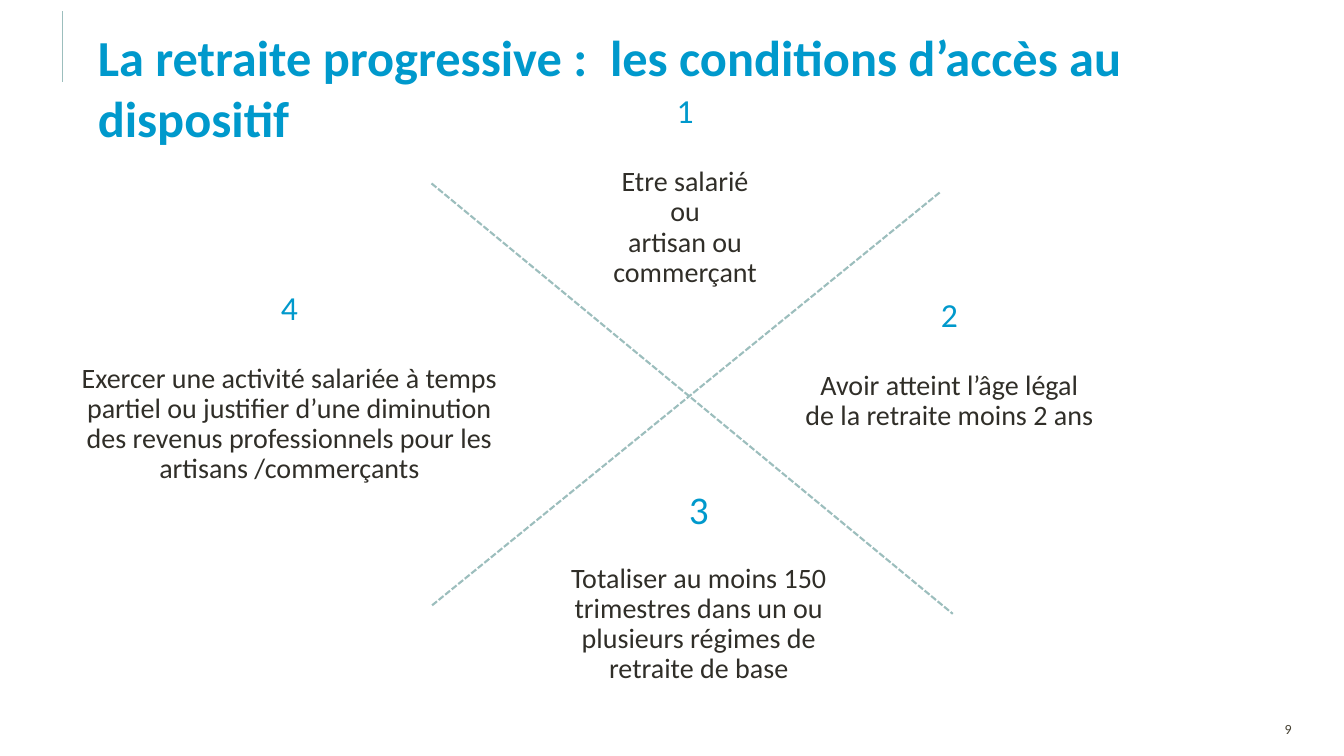
import pptx
import pptx.dml.color
import pptx.enum.dml
import pptx.enum.text
import pptx.oxml.ns
import pptx.util
from lxml import etree

Inches, Pt = pptx.util.Inches, pptx.util.Pt
ALIGN = pptx.enum.text.PP_ALIGN
ANCHOR = pptx.enum.text.MSO_ANCHOR
BLUE, DARK, GREY, SAGE = "0099CC", "302E28", "474233", "9CBEBD"

TITLE = "La retraite progressive :  les conditions d’accès au dispositif"
PAGE = "9"
# number, number size, gap below it (points), box (inches), paragraphs
TERMS = [
    ("1", 24, 26, (5.47, 0.89, 2.65, 2.05),
     ["Etre salarié", "ou", "artisan ou commerçant"]),
    ("2", 24, 26, (7.87, 2.91, 3.09, 1.44),
     ["Avoir atteint l’âge légal de la retraite moins 2 ans"]),
    ("3", 28, 22, (5.34, 4.82, 3.18, 2.07),
     ["Totaliser au moins 150 trimestres dans un ou plusieurs régimes de "
      "retraite de base"]),
    ("4", 24, 26, (0.62, 2.84, 4.5, 2.05),
     ["Exercer une activité salariée à temps partiel ou justifier d’une "
      "diminution des revenus professionnels pour les artisans /commerçants"]),
]
# start, end, width (points), dashed
LINES = [
    ((4.28, 1.82), (9.45, 6.09), 1.5, True),
    ((9.32, 1.91), (4.28, 6.01), 1.5, True),
    ((0.62, 0.11), (0.62, 0.81), 0.75, False),
]


def color(code):
    return pptx.dml.color.RGBColor.from_string(code)


def place(shape, box):
    shape.left, shape.top, shape.width, shape.height = map(Inches, box)


def frame(shape, anchor=ANCHOR.TOP):
    """Set wrapping, fixed size and anchor, and return the text frame."""
    body = shape.text_frame
    body.word_wrap = True
    body.auto_size = pptx.enum.text.MSO_AUTO_SIZE.NONE
    body.vertical_anchor = anchor
    return body


def write(para, text, size, code, bold=False, align=ALIGN.CENTER,
          space=0.9, before=0):
    para.alignment = align
    para.line_spacing = space
    para.space_before = Pt(before)
    run = para.add_run()
    run.text = text
    run.font.name = "Calibri"
    run.font.size = Pt(size)
    run.font.bold = bold
    run.font.color.rgb = color(code)


def draw(slide, start, end, width, dashed):
    line = slide.shapes.add_connector(
        pptx.enum.shapes.MSO_CONNECTOR.STRAIGHT,
        *map(Inches, start + end))
    line.line.color.rgb = color(SAGE)
    line.line.width = Pt(width)
    if dashed:
        # SQUARE_DOT is the sysDash preset's sibling; set the preset itself
        line.line.dash_style = pptx.enum.dml.MSO_LINE.SQUARE_DOT
        dash = line.line._ln.find(pptx.oxml.ns.qn("a:prstDash"))
        dash.set("val", "sysDash")
    etree.SubElement(line._element.spPr, pptx.oxml.ns.qn("a:effectLst"))


def main():
    deck = pptx.Presentation()
    deck.slide_width, deck.slide_height = Inches(13.33), Inches(7.5)
    slide = deck.slides.add_slide(deck.slide_layouts[5])

    title = slide.shapes.title
    place(title, (0.87, 0.21, 11.84, 0.71))
    write(frame(title).paragraphs[0], TITLE, 36, BLUE, bold=True,
          align=ALIGN.LEFT, space=1.0)

    page = slide.shapes.add_textbox(0, 0, 0, 0)
    place(page, (11.85, 7.08, 1.06, 0.3))
    write(frame(page, ANCHOR.MIDDLE).paragraphs[0], PAGE, 10, GREY,
          align=ALIGN.RIGHT, space=1.0)

    for number, size, gap, box, texts in TERMS:
        term = slide.shapes.add_textbox(0, 0, 0, 0)
        place(term, box)
        body = frame(term)
        write(body.paragraphs[0], number, size, BLUE)
        for i, text in enumerate(texts):
            write(body.add_paragraph(), text, 20, DARK,
                  before=0 if i else gap)

    for line in LINES:
        draw(slide, *line)
    deck.save("out.pptx")


if __name__ == "__main__":
    main()
